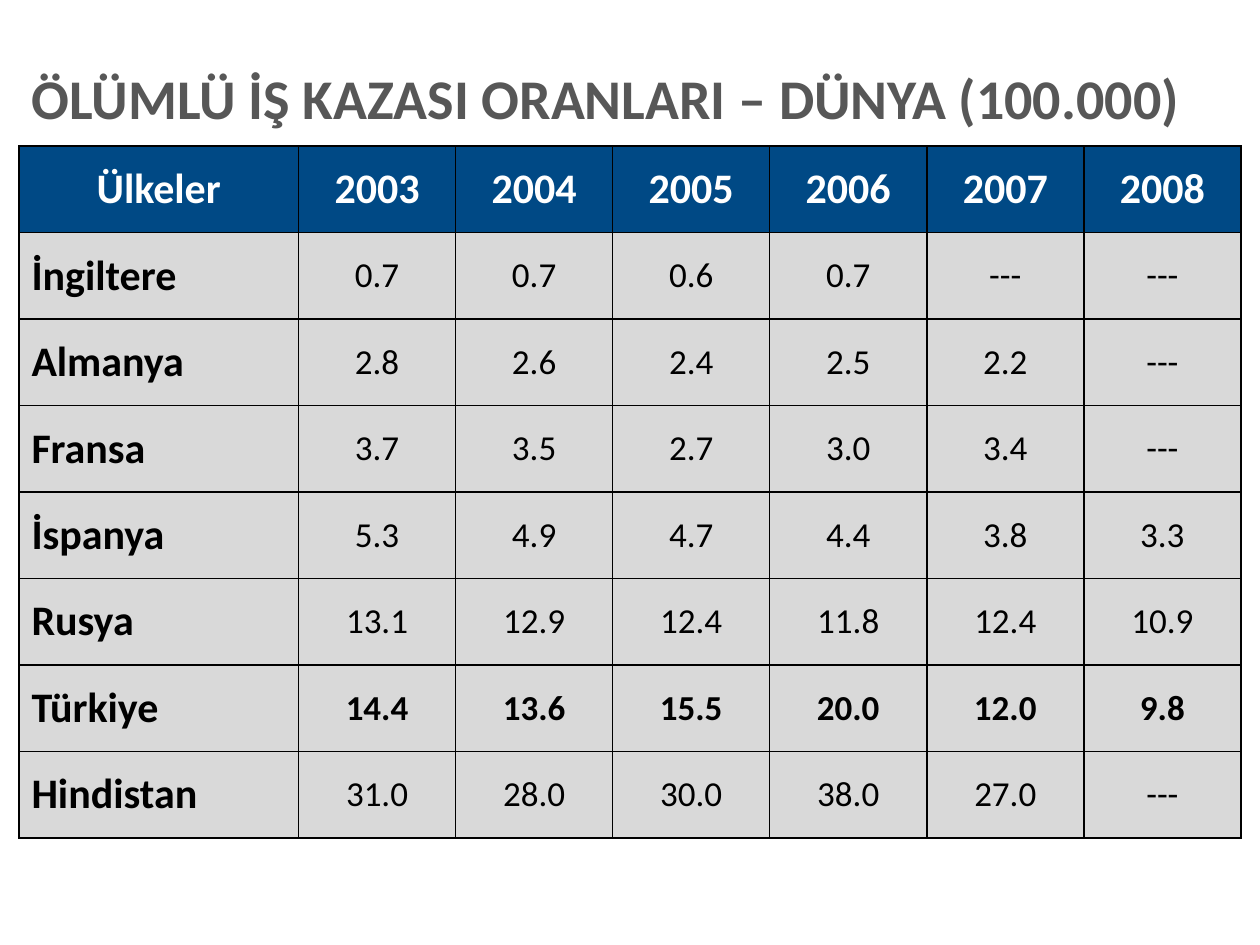
from pptx import Presentation
from pptx.dml.color import RGBColor
from pptx.enum.text import MSO_ANCHOR as Anchor, MSO_AUTO_SIZE as AutoSize, PP_ALIGN as Align
from pptx.oxml import parse_xml
from pptx.oxml.ns import nsdecls
from pptx.util import Inches, Pt

COLORS = {
    "header": "004985",
    "body": "D9D9D9",
    "white": "FFFFFF",
    "black": "000000",
    "gray": "575757",
}


def write(text_frame, text, size=20, bold=False, color="black", align=Align.LEFT):
    """Append a formatted run to the first paragraph and return the paragraph."""
    paragraph = text_frame.paragraphs[0]
    paragraph.alignment = align
    run = paragraph.add_run()
    run.text = text
    run.font.name = "Calibri"
    run.font.size = Pt(size)
    run.font.bold = bold
    run.font.color.rgb = RGBColor.from_string(COLORS[color])
    return paragraph


def style_cell(cell, fill):
    """Give a cell thin black borders, a solid fill and middle anchoring."""
    properties = cell._tc.get_or_add_tcPr()
    for side in ("lnL", "lnR", "lnT", "lnB"):
        properties.append(parse_xml(
            f'<a:{side} {nsdecls("a")} w="{Pt(1)}"><a:solidFill>'
            f'<a:srgbClr val="{COLORS["black"]}"/></a:solidFill></a:{side}>'))
    cell.fill.solid()
    cell.fill.fore_color.rgb = RGBColor.from_string(COLORS[fill])
    cell.vertical_anchor = Anchor.MIDDLE


presentation = Presentation()
presentation.slide_width = Inches(10)
presentation.slide_height = Inches(7.5)
slide = presentation.slides.add_slide(presentation.slide_layouts[5])

# Title
title = slide.shapes.title
title.left, title.top = Inches(0.25), Inches(0.45)
title.width, title.height = Inches(9.64), Inches(0.71)
title_frame = title.text_frame
title_frame.auto_size = AutoSize.NONE
title_frame.vertical_anchor = Anchor.MIDDLE
title_frame.margin_left = title_frame.margin_right = 0
heading = write(title_frame, "ÖLÜMLÜ İŞ KAZASI ORANLARI – DÜNYA (100.000)",
                size=32, bold=True, color="gray")
heading.line_spacing = 0.9

# Table of fatal accident rates
rates = [
    ["Ülkeler", "2003", "2004", "2005", "2006", "2007", "2008"],
    ["İngiltere", "0.7", "0.7", "0.6", "0.7", "---", "---"],
    ["Almanya", "2.8", "2.6", "2.4", "2.5", "2.2", "---"],
    ["Fransa", "3.7", "3.5", "2.7", "3.0", "3.4", "---"],
    ["İspanya", "5.3", "4.9", "4.7", "4.4", "3.8", "3.3"],
    ["Rusya", "13.1", "12.9", "12.4", "11.8", "12.4", "10.9"],
    ["Türkiye", "14.4", "13.6", "15.5", "20.0", "12.0", "9.8"],
    ["Hindistan", "31.0", "28.0", "30.0", "38.0", "27.0", "---"],
]
table_width, country_width = 9.7, 2.22
table = slide.shapes.add_table(
    len(rates), len(rates[0]), Inches(0.15), Inches(1.16), Inches(table_width), Inches(5.49)).table
year_width = (table_width - country_width) / (len(rates[0]) - 1)
for index, column in enumerate(table.columns):
    column.width = Inches(year_width if index else country_width)

for row_index, row in enumerate(rates):
    is_header = row_index == 0
    for column_index, value in enumerate(row):
        is_country = column_index == 0
        cell = table.cell(row_index, column_index)
        style_cell(cell, "header" if is_header else "body")
        write(cell.text_frame, value,
              size=24 if is_header or is_country else 20,
              bold=is_header or is_country or row[0] == "Türkiye",
              color="white" if is_header else "black",
              align=Align.LEFT if is_country and not is_header else Align.CENTER)

presentation.save("out.pptx")
